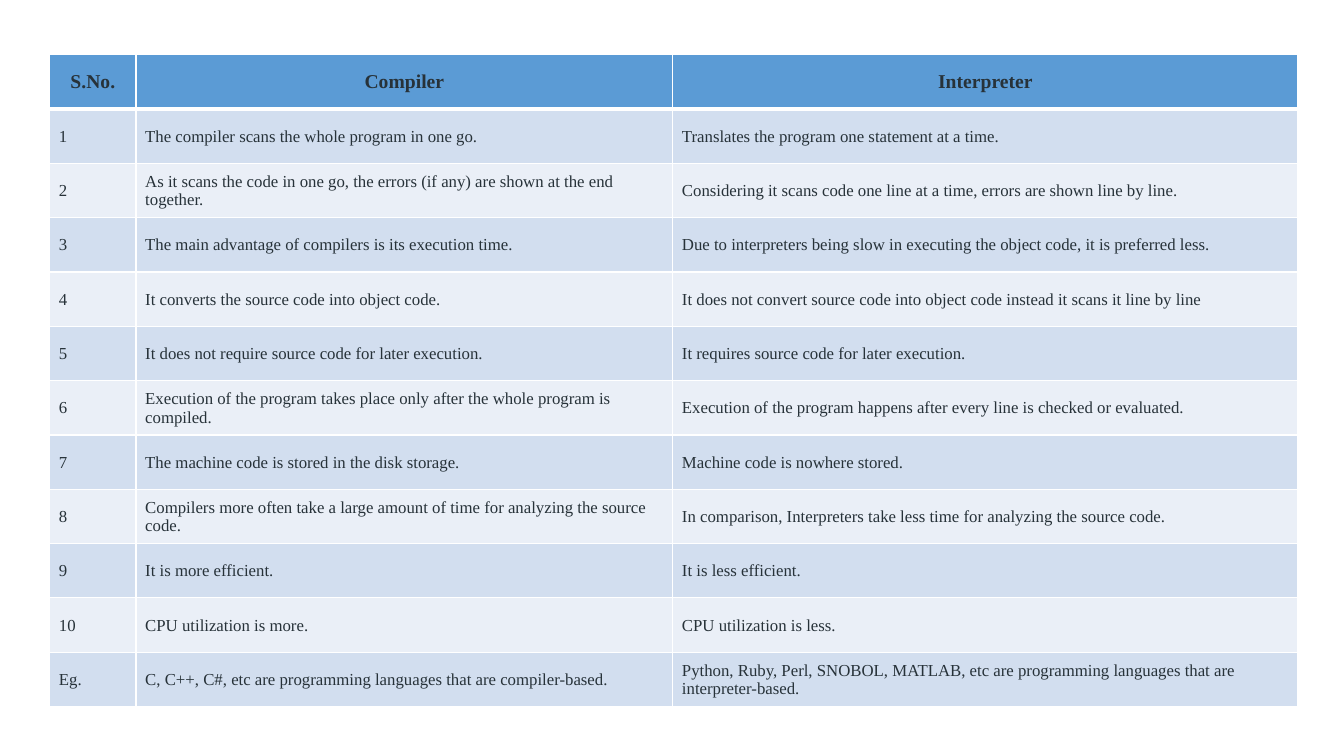
from lxml import etree
from pptx import Presentation
from pptx.dml.color import RGBColor
from pptx.enum import text
from pptx.oxml import ns
from pptx.util import Pt

HEADER_BLUE = RGBColor(0x5B, 0x9B, 0xD5)
BAND_DARK = RGBColor(0xD2, 0xDE, 0xEF)
BAND_LIGHT = RGBColor(0xEA, 0xEF, 0xF7)
INK = RGBColor(0x27, 0x32, 0x39)
WHITE = RGBColor(0xFF, 0xFF, 0xFF)

COLUMN_WIDTHS = [61.7, 383.4, 446.6]
ROW_HEIGHT = 38.82
HEADINGS = ("S.No.", "Compiler", "Interpreter")
COMPARISONS = [
    ("1", "The compiler scans the whole program in one go.",
     "Translates the program one statement at a time."),
    ("2", "As it scans the code in one go, the errors (if any) are shown at the end together.",
     "Considering it scans code one line at a time, errors are shown line by line."),
    ("3", "The main advantage of compilers is its execution time.",
     "Due to interpreters being slow in executing the object code, it is preferred less."),
    ("4", "It converts the source code into object code.",
     "It does not convert source code into object code instead it scans it line by line"),
    ("5", "It does not require source code for later execution.",
     "It requires source code for later execution."),
    ("6", "Execution of the program takes place only after the whole program is compiled.",
     "Execution of the program happens after every line is checked or evaluated."),
    ("7", "The machine code is stored in the disk storage.",
     "Machine code is nowhere stored."),
    ("8", "Compilers more often take a large amount of time for analyzing the source code.",
     "In comparison, Interpreters take less time for analyzing the source code."),
    ("9", "It is more efficient.", "It is less efficient."),
    ("10", "CPU utilization is more.", "CPU utilization is less."),
    ("Eg.", "C, C++, C#, etc are programming languages that are compiler-based.",
     "Python, Ruby, Perl, SNOBOL, MATLAB, etc are programming languages that are "
     "interpreter-based."),
]


def set_borders(cell, top=1, bottom=1):
    """Draw white edges; call before filling, as borders precede the fill in XML."""
    properties = cell._tc.get_or_add_tcPr()
    for edge, width in (("L", 1), ("R", 1), ("T", top), ("B", bottom)):
        line = etree.SubElement(properties, ns.qn(f"a:ln{edge}"), w=str(Pt(width)))
        fill = etree.SubElement(line, ns.qn("a:solidFill"))
        etree.SubElement(fill, ns.qn("a:srgbClr"), val=str(WHITE))


def write_cell(cell, content, size=12, bold=False, align=text.PP_ALIGN.LEFT, left=6.6):
    cell.vertical_anchor = text.MSO_ANCHOR.MIDDLE
    cell.margin_left = Pt(left)
    cell.margin_top = cell.margin_right = Pt(0.6)
    cell.margin_bottom = Pt(0)
    para = cell.text_frame.paragraphs[0]
    para.alignment = align
    span = para.add_run()
    span.text = content
    span.font.name = "Times New Roman"
    span.font.size = Pt(size)
    span.font.bold = bold
    span.font.color.rgb = INK


deck = Presentation()
deck.slide_width, deck.slide_height = Pt(960), Pt(540)
page = deck.slides.add_slide(deck.slide_layouts[6])

rows = [HEADINGS] + COMPARISONS
table = page.shapes.add_table(
    len(rows), len(HEADINGS), Pt(35.5), Pt(39),
    Pt(sum(COLUMN_WIDTHS)), Pt(ROW_HEIGHT * len(rows))).table
for column, width in zip(table.columns, COLUMN_WIDTHS):
    column.width = Pt(width)

for number, contents in enumerate(rows):
    table.rows[number].height = Pt(ROW_HEIGHT)
    for column, content in enumerate(contents):
        cell = table.cell(number, column)
        set_borders(cell, top=3 if number == 1 else 1, bottom=3 if number == 0 else 1)
        cell.fill.solid()
        if number == 0:
            cell.fill.fore_color.rgb = HEADER_BLUE
            write_cell(cell, content, size=14, bold=True,
                       align=text.PP_ALIGN.CENTER, left=0.6)
        else:
            cell.fill.fore_color.rgb = BAND_DARK if number % 2 else BAND_LIGHT
            write_cell(cell, content)

deck.save("out.pptx")
